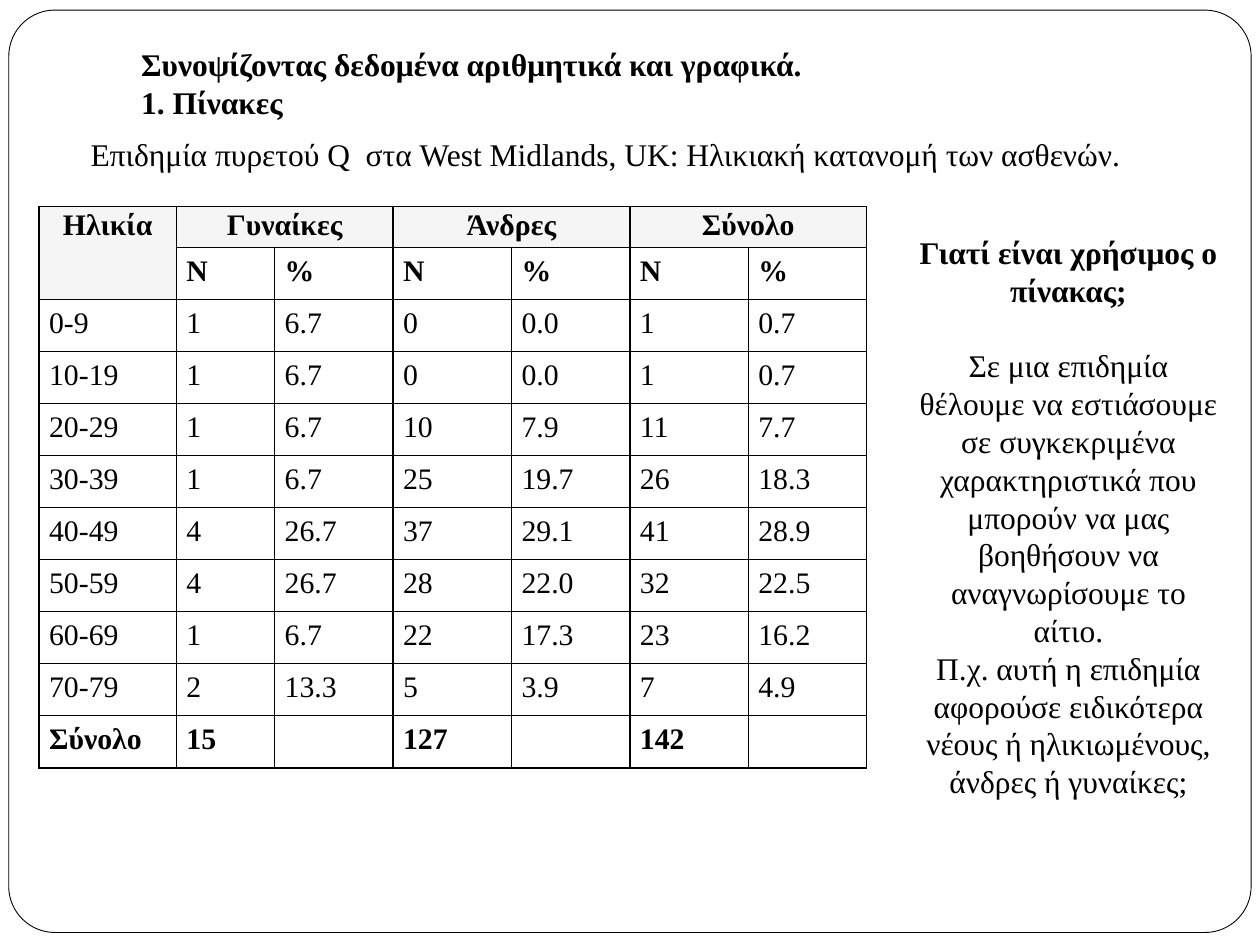
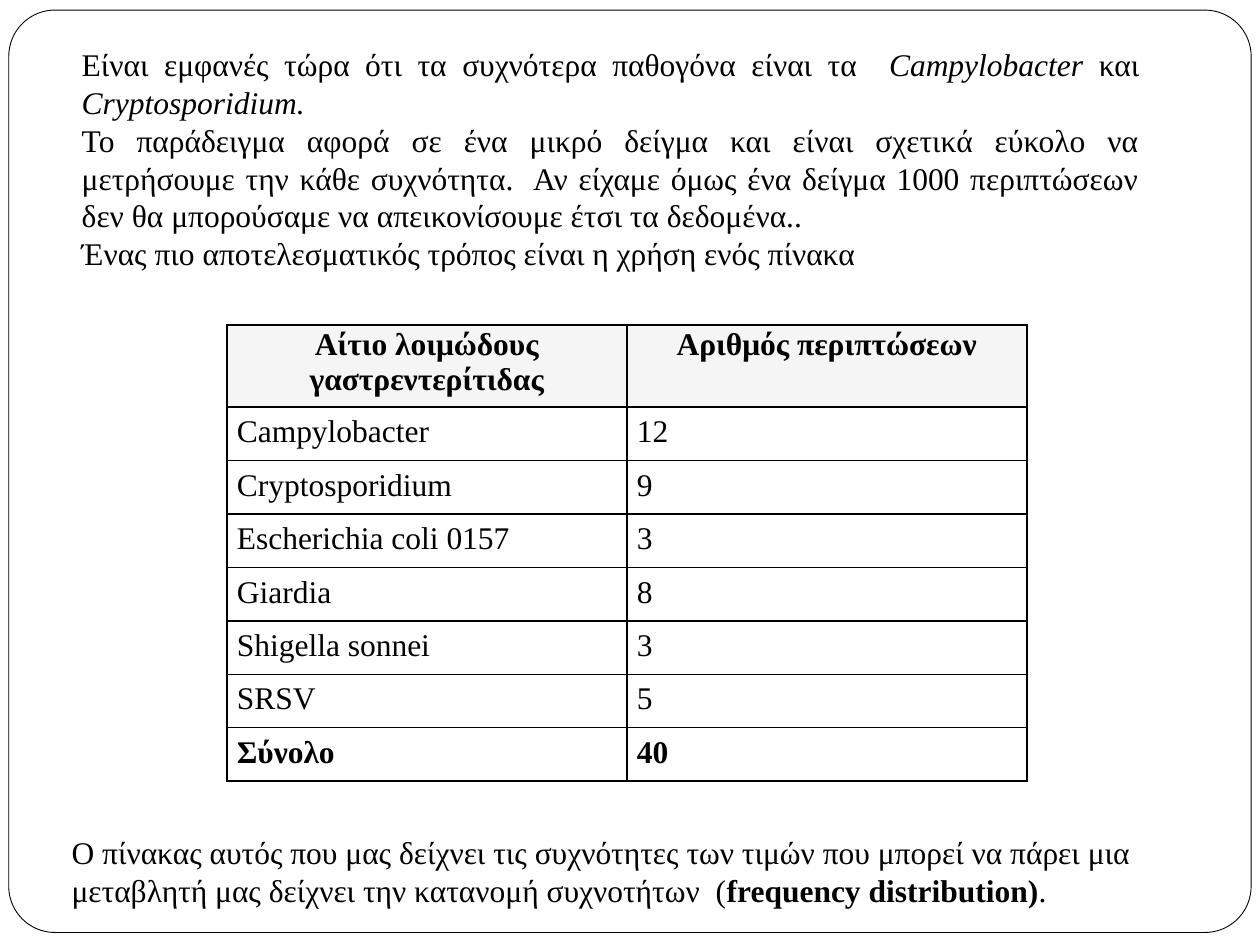
"""Build two slides on summarising outbreak data in tables."""
from dataclasses import dataclass
from typing import NamedTuple

from lxml.etree import SubElement
from pptx import Presentation
from pptx.dml.color import RGBColor
from pptx.enum.shapes import MSO_SHAPE
from pptx.enum.text import MSO_ANCHOR, MSO_AUTO_SIZE, PP_ALIGN
from pptx.oxml import parse_xml
from pptx.oxml.ns import nsdecls, qn
from pptx.util import Inches, Pt

BLACK = RGBColor(0x00, 0x00, 0x00)
WHITE = RGBColor(0xFF, 0xFF, 0xFF)
PALE = RGBColor(0xF5, 0xF5, 0xF5)
FONT = "Times New Roman"
SIZE = 18
WIDE, HIGH = Inches(10), Inches(7.5)
LEFT, MID, JUST = PP_ALIGN.LEFT, PP_ALIGN.CENTER, PP_ALIGN.JUSTIFY


class Box(NamedTuple):
    """A place on the slide, in percent of its width and height."""
    left: float
    top: float
    width: float
    height: float

    def place(self) -> tuple[int, int, int, int]:
        """Give the place in EMU."""
        return (round(WIDE * self.left / 100), round(HIGH * self.top / 100),
                round(WIDE * self.width / 100), round(HIGH * self.height / 100))


class Run(NamedTuple):
    """A stretch of text in one style."""
    text: str
    bold: bool = False
    slant: bool = False


@dataclass(frozen=True)
class Para:
    """A paragraph of one or more runs."""
    runs: tuple[Run, ...]
    align: PP_ALIGN = LEFT
    after: float = 0


@dataclass(frozen=True)
class Grid:
    """A table with a pale head row; head is that row's share of the height."""
    box: Box
    rows: list[list[str]]
    cols: tuple[float, ...]
    head: float
    size: int
    bold: tuple[int, ...]
    spans: tuple[tuple[int, int, int, int], ...] = ()


FRAME = Box(0.7, 1.07, 98.6, 97.6)

TITLE = (Para((Run("Συνοψίζοντας δεδομένα αριθμητικά και γραφικά.", True),)),
         Para((Run("1. Πίνακες", True),)))
LEAD = (Para((Run("Επιδημία πυρετού Q  στα West Midlands, UK: "
                  "Ηλικιακή κατανομή των ασθενών."),)),)
WHY = (
    Para((Run("Γιατί είναι χρήσιμος ο πίνακας;", True),), MID, 21.6),
    Para((Run("Σε μια επιδημία θέλουμε να εστιάσουμε σε συγκεκριμένα "
              "χαρακτηριστικά που μπορούν να μας βοηθήσουν να "
              "αναγνωρίσουμε το αίτιο."),), MID),
    Para((Run("Π.χ. αυτή η επιδημία αφορούσε ειδικότερα νέους ή "
              "ηλικιωμένους, άνδρες ή γυναίκες;"),), MID),
)
INTRO = (
    Para((Run("Είναι εμφανές τώρα ότι τα συχνότερα παθογόνα είναι τα  "),
          Run("Campylobacter ", slant=True), Run("και "),
          Run("Cryptosporidium.", slant=True)), JUST),
    Para((Run("Το παράδειγμα αφορά σε ένα μικρό δείγμα και είναι σχετικά "
              "εύκολο να μετρήσουμε την κάθε συχνότητα.  Αν είχαμε όμως ένα "
              "δείγμα 1000 περιπτώσεων δεν θα μπορούσαμε να απεικονίσουμε "
              "έτσι τα δεδομένα.."),), JUST),
    Para((Run("Ένας πιο αποτελεσματικός τρόπος είναι η χρήση ενός πίνακα"),),
         JUST),
)
CLOSE = (
    Para((Run("Ο πίνακας αυτός που μας δείχνει τις συχνότητες των τιμών που "
              "μπορεί να πάρει μια μεταβλητή μας δείχνει την κατανομή "
              "συχνοτήτων  ("),
          Run("frequency distribution)", True), Run("."))),
)

WOMEN = (1, 1, 1, 1, 4, 4, 1, 2)
MEN = (0, 0, 10, 25, 37, 28, 22, 5)
GERMS = (("Campylobacter", 12), ("Cryptosporidium", 9),
         ("Escherichia coli 0157", 3), ("Giardia", 8),
         ("Shigella sonnei", 3), ("SRSV", 5))


def age_rows() -> list[list[str]]:
    """Work out counts and shares by age group."""
    groups = (WOMEN, MEN, tuple(w + m for w, m in zip(WOMEN, MEN)))
    rows = [["Ηλικία", "Γυναίκες", "", "Άνδρες", "", "Σύνολο", ""],
            [""] + ["N", "%"] * len(groups)]
    for step in range(len(WOMEN)):
        row = ["0-9" if step == 0 else f"{step * 10}-{step * 10 + 9}"]
        for group in groups:
            row += [str(group[step]), f"{100 * group[step] / sum(group):.1f}"]
        rows.append(row)
    total = ["Σύνολο"]
    for group in groups:
        total += [str(sum(group)), ""]
    return rows + [total]


def germ_rows() -> list[list[str]]:
    """List the cases by cause, with their total."""
    return [["Αίτιο λοιμώδους γαστρεντερίτιδας", "Αριθμός περιπτώσεων"],
            *([name, str(count)] for name, count in GERMS),
            ["Σύνολο", str(sum(count for _, count in GERMS))]]


AGES = Grid(Box(3.1, 21.87, 65.7, 59.2), age_rows(),
            (1.09, 0.78, 0.94, 0.94, 0.94, 0.94, 0.94), 0.07, 17, (0, 1, 10),
            ((0, 0, 1, 0), (0, 1, 0, 2), (0, 3, 0, 4), (0, 5, 0, 6)))
CAUSES = Grid(Box(18, 34.4, 63.5, 48.27), germ_rows(), (1, 1), 0.18, SIZE,
              (0, 7))


def write(frame, paras: tuple[Para, ...], size: int = SIZE) -> None:
    """Fill a text frame with paragraphs."""
    for index, para in enumerate(paras):
        line = frame.add_paragraph() if index else frame.paragraphs[0]
        line.alignment = para.align
        line.space_before, line.space_after = Pt(0), Pt(para.after)
        font = line.font
        font.name, font.size, font.color.rgb = FONT, Pt(size), BLACK
        same = len({run[1:] for run in para.runs}) == 1
        if same:
            font.bold, font.italic = para.runs[0][1:]
        for run in para.runs:
            part = line.add_run()
            part.text = run.text
            if not same:
                part.font.bold, part.font.italic = run.bold, run.slant


def add_frame(slide) -> None:
    """Draw the rounded outline behind everything else."""
    shape = slide.shapes.add_shape(MSO_SHAPE.ROUNDED_RECTANGLE, *FRAME.place())
    shape.adjustments[0] = 0.05
    shape.shadow.inherit = False
    shape.fill.solid()
    shape.fill.fore_color.rgb = WHITE
    shape.line.color.rgb = BLACK
    shape.line.width = Pt(0.5)
    shape.element.getparent().insert(2, shape.element)


def add_title(slide, box: Box, paras: tuple[Para, ...]) -> None:
    """Move and fill the title placeholder."""
    title = slide.shapes.title
    title.left, title.top, title.width, title.height = box.place()
    frame = title.text_frame
    frame.auto_size = MSO_AUTO_SIZE.NONE
    frame.vertical_anchor = MSO_ANCHOR.TOP
    write(frame, paras)


def add_text(slide, box: Box, paras: tuple[Para, ...]) -> None:
    """Add a wrapping text box."""
    frame = slide.shapes.add_textbox(*box.place()).text_frame
    frame.word_wrap = True
    write(frame, paras)


def rule(cell) -> None:
    """Draw a black line on each side of a cell."""
    props = cell._tc.get_or_add_tcPr()
    for index, side in enumerate("LRTB"):
        edge = parse_xml(f'<a:ln{side} {nsdecls("a")} w="{Pt(1)}"/>')
        fill = SubElement(edge, qn("a:solidFill"))
        SubElement(fill, qn("a:srgbClr"), val=str(BLACK))
        props.insert(index, edge)


def add_grid(slide, grid: Grid) -> None:
    """Add a ruled table."""
    left, top, width, height = grid.box.place()
    count = len(grid.rows)
    table = slide.shapes.add_table(count, len(grid.cols), left, top,
                                   width, height).table
    table.horz_banding = False
    for col, share in zip(table.columns, grid.cols):
        col.width = round(width * share / sum(grid.cols))
    for index, row in enumerate(table.rows):
        share = grid.head if index == 0 else (1 - grid.head) / (count - 1)
        row.height = round(height * share)
        for cell, text in zip(row.cells, grid.rows[index]):
            head = index == 0
            side, edge = (0.02, 0.02) if head else (0.08, 0.06)
            cell.margin_left = cell.margin_right = Inches(side)
            cell.margin_top = cell.margin_bottom = Inches(edge)
            cell.fill.solid()
            cell.fill.fore_color.rgb = PALE if head else WHITE
            rule(cell)
            run = Run(text, index in grid.bold)
            write(cell.text_frame, (Para((run,), MID if head else LEFT),),
                  grid.size)
    for top_row, first, last_row, last in grid.spans:
        table.cell(top_row, first).merge(table.cell(last_row, last))


def main() -> None:
    """Build and save the slides."""
    deck = Presentation()
    deck.slide_width, deck.slide_height = WIDE, HIGH
    titled, blank = deck.slide_layouts[5], deck.slide_layouts[6]

    ages = deck.slides.add_slide(titled)
    add_frame(ages)
    add_title(ages, Box(10.2, 4.13, 80.5, 9.47), TITLE)
    add_text(ages, Box(6.2, 13.6, 87.5, 5.33), LEAD)
    add_grid(ages, AGES)
    add_text(ages, Box(71.9, 24, 25.8, 66), WHY)

    causes = deck.slides.add_slide(blank)
    add_frame(causes)
    add_text(causes, Box(5.5, 4.13, 85.9, 25.6), INTRO)
    add_grid(causes, CAUSES)
    add_text(causes, Box(4.7, 87.47, 90.6, 9.47), CLOSE)

    deck.save("out.pptx")


if __name__ == "__main__":
    main()
